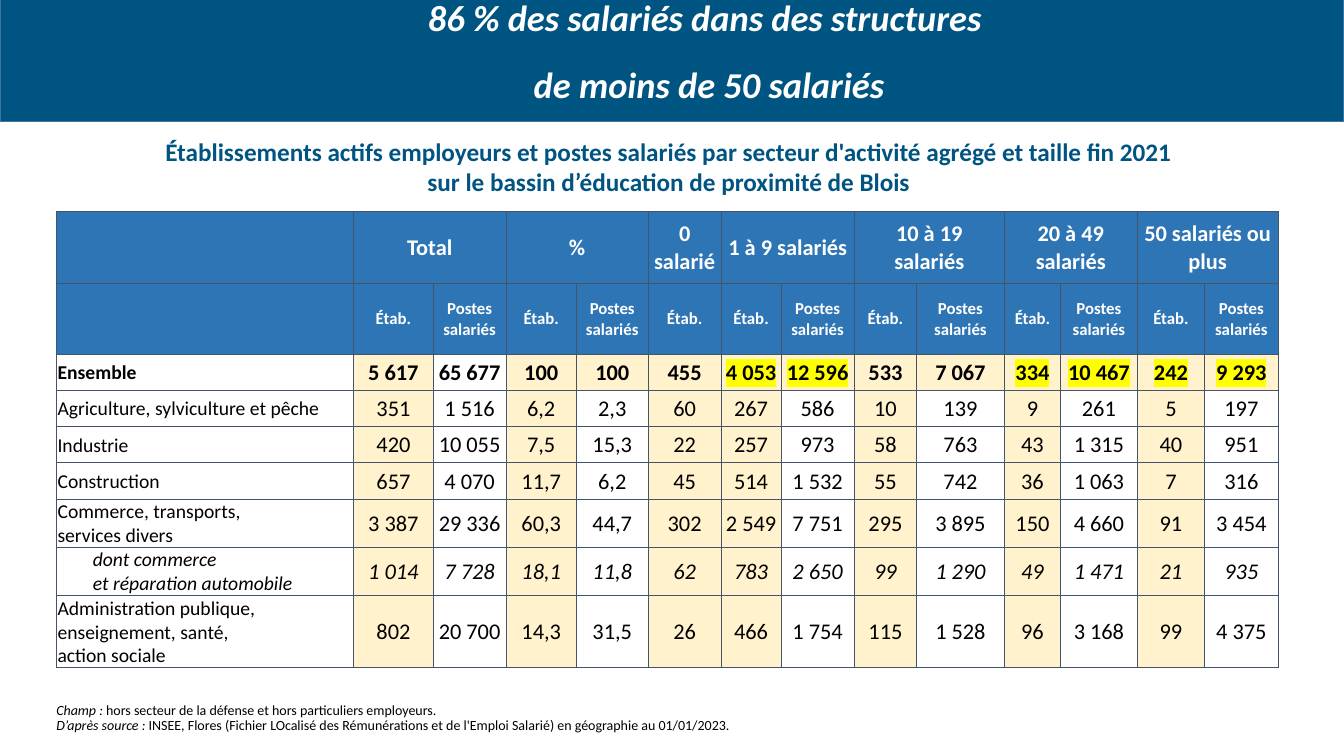
from lxml.etree import SubElement, fromstring
from pptx import Presentation
from pptx.dml.color import RGBColor
from pptx.enum.shapes import MSO_SHAPE
from pptx.enum.text import MSO_ANCHOR, MSO_AUTO_SIZE, PP_ALIGN
from pptx.oxml.ns import nsdecls, qn
from pptx.util import Cm, Pt

# Content
TITLE = ["86 % des salariés dans des structures ", "de moins de 50 salariés"]
SUBTITLE = [
    "Établissements actifs employeurs et postes salariés par secteur d'activité agrégé et taille fin 2021",
    "sur le bassin d’éducation de proximité de Blois",
]
NOTES = [
    ("Champ : ", "hors secteur de la défense et hors particuliers employeurs."),
    ("D’après source : ", "INSEE, Flores (Fichier LOcalisé des Rémunérations et de l'Emploi Salarié) "
                          "en géographie au 01/01/2023."),
]
MEASURES = ["Étab.", "Postes salariés"]
GROUPS = [  # heading lines, number of measures below
    (["Total"], 2), (["%"], 2), (["0 salarié"], 1), (["1 à 9 salariés"], 2),
    (["10 à 19", "salariés"], 2), (["20 à 49 salariés"], 2), (["50 salariés ou plus"], 2),
]
SECTORS = [
    (["Ensemble"], ["5 617", "65 677", "100", "100", "455", "4 053", "12 596",
                    "533", "7 067", "334", "10 467", "242", "9 293"]),
    (["Agriculture, sylviculture et pêche"],
     ["351", "1 516", "6,2", "2,3", "60", "267", "586", "10", "139", "9", "261", "5", "197"]),
    (["Industrie"],
     ["420", "10 055", "7,5", "15,3", "22", "257", "973", "58", "763", "43", "1 315", "40", "951"]),
    (["Construction"],
     ["657", "4 070", "11,7", "6,2", "45", "514", "1 532", "55", "742", "36", "1 063", "7", "316"]),
    (["Commerce, transports,", "services divers"],
     ["3 387", "29 336", "60,3", "44,7", "302", "2 549", "7 751",
      "295", "3 895", "150", "4 660", "91", "3 454"]),
    (["dont commerce", "et réparation automobile"],
     ["1 014", "7 728", "18,1", "11,8", "62", "783", "2 650",
      "99", "1 290", "49", "1 471", "21", "935"]),
    (["Administration publique, enseignement, santé,", "action sociale"],
     ["802", "20 700", "14,3", "31,5", "26", "466", "1 754",
      "115", "1 528", "96", "3 168", "99", "4 375"]),
]
HIGHLIGHTED = {"4 053", "12 596", "334", "10 467", "242", "9 293"}
COL_WIDTHS = [7.49, 2.01, 1.83, 1.78, 1.8, 1.85, 1.5, 1.85, 1.57, 2.21, 1.42, 1.93, 1.7, 1.85]
ROW_HEIGHTS = [1.8, 1.8] + [0.91] * 6 + [1.8]

FONT = "Calibri"
NAVY = RGBColor(0x00, 0x54, 0x82)
BANNER_EDGE = RGBColor(0x43, 0x73, 0x9E)
HEADER = RGBColor(0x2E, 0x75, 0xB6)
CREAM = RGBColor(0xFF, 0xF2, 0xCC)
GRID = RGBColor(0x44, 0x54, 0x6A)
YELLOW = RGBColor(0xFF, 0xFF, 0x00)
WHITE = RGBColor(0xFF, 0xFF, 0xFF)
BLACK = RGBColor(0x00, 0x00, 0x00)


def add_run(p, text, size, color, bold=False, italic=False, highlight=None):
    r = p.add_run()
    r.text = text
    r.font.size, r.font.bold, r.font.italic = Pt(size), bold, italic
    r.font.color.rgb = color
    if highlight:
        mark = SubElement(r.font._element, qn("a:highlight"))
        SubElement(mark, qn("a:srgbClr")).set("val", str(highlight))
    r.font.name = FONT


def add_lines(tf, lines, size, color, align=PP_ALIGN.CENTER, **style):
    for i, line in enumerate(lines):
        p = tf.add_paragraph() if i else tf.paragraphs[0]
        p.alignment = align
        add_run(p, line, size, color, **style)


def paint(cell, color):
    if color:
        cell.fill.solid()
        cell.fill.fore_color.rgb = color
    else:
        cell.fill.background()
    tc_pr = cell._tc.get_or_add_tcPr()
    for i, side in enumerate("LRTB"):
        tc_pr.insert(i, fromstring(
            f'<a:ln{side} {nsdecls("a")} w="{Pt(0.5)}"><a:solidFill>'
            f'<a:srgbClr val="{GRID}"/></a:solidFill></a:ln{side}>'))


def write(cell, lines, size, color, align=PP_ALIGN.CENTER, **style):
    cell.vertical_anchor = MSO_ANCHOR.MIDDLE
    cell.margin_left = cell.margin_right = cell.margin_top = Cm(0.03)
    cell.margin_bottom = 0
    add_lines(cell.text_frame, lines, size, color, align, **style)


prs = Presentation()
prs.slide_width, prs.slide_height = Cm(33.87), Cm(19.05)
s = prs.slides.add_slide(prs.slide_layouts[5])

# Subtitle
tf = s.shapes.add_textbox(Cm(3.89), Cm(3.3), Cm(25.93), Cm(1.8)).text_frame
tf.word_wrap = True
tf.margin_left = tf.margin_right = 0
add_lines(tf, SUBTITLE, 18, NAVY, bold=True)

# Notes
tf = s.shapes.add_textbox(Cm(1.17), Cm(17.6), Cm(25.68), Cm(1.07)).text_frame
tf.word_wrap = True
for i, (lead, note) in enumerate(NOTES):
    p = tf.add_paragraph() if i else tf.paragraphs[0]
    p.line_spacing = 0.9
    add_run(p, lead, 10, BLACK, italic=True)
    add_run(p, note, 10, BLACK)

# Table grid
table = s.shapes.add_table(len(ROW_HEIGHTS), len(COL_WIDTHS), Cm(1.42), Cm(5.33),
                           Cm(sum(COL_WIDTHS)), Cm(sum(ROW_HEIGHTS))).table
table.first_row = table.horz_banding = False
for column, width in zip(table.columns, COL_WIDTHS):
    column.width = Cm(width)
for row, height in zip(table.rows, ROW_HEIGHTS):
    row.height = Cm(height)

# Table headings
measure_of = [None]
for heading, count in GROUPS:
    col = len(measure_of)
    if count > 1:
        table.cell(0, col).merge(table.cell(0, col + count - 1))
    write(table.cell(0, col), heading, 16, WHITE, bold=True)
    measure_of += MEASURES[:count]
for col, measure in enumerate(measure_of):
    for row in (0, 1):
        paint(table.cell(row, col), HEADER)
    if measure:
        write(table.cell(1, col), [measure], 12, WHITE, bold=True)

# Table body
for row, (label, values) in enumerate(SECTORS, start=2):
    is_total = label[0] == "Ensemble"
    is_detail = label[0].startswith("dont")
    style = {"bold": is_total, "italic": is_detail}
    head = table.cell(row, 0)
    paint(head, None)
    write(head, label, 14, BLACK, PP_ALIGN.LEFT, **style)
    if is_detail:
        for p in head.text_frame.paragraphs:
            p._p.get_or_add_pPr().set("marL", str(Cm(0.89)))
    for col, value in enumerate(values, start=1):
        cell = table.cell(row, col)
        cream = measure_of[col] == MEASURES[0] or (is_total and col != 2)
        paint(cell, CREAM if cream else None)
        mark = YELLOW if is_total and value in HIGHLIGHTED else None
        write(cell, [value], 16, BLACK, highlight=mark, **style)

# Banner
banner = s.shapes.add_shape(MSO_SHAPE.RECTANGLE, 0, Cm(-0.08), prs.slide_width, Cm(3.15))
banner.shadow.inherit = False
banner.fill.solid()
banner.fill.fore_color.rgb = NAVY
banner.line.color.rgb = BANNER_EDGE
banner.line.width = Pt(1)

# Title, in front of the banner
title = s.shapes.title
banner.element.addnext(title.element)
title.left, title.top, title.width, title.height = Cm(1.9), Cm(-0.08), Cm(31.95), Cm(3.43)
tf = title.text_frame
tf.auto_size = MSO_AUTO_SIZE.NONE
tf.word_wrap = True
tf.vertical_anchor = MSO_ANCHOR.BOTTOM
tf.margin_bottom = Cm(0.68)
add_lines(tf, TITLE, 26, WHITE, bold=True, italic=True)
for p in tf.paragraphs:
    p.line_spacing = 0.9
tf.paragraphs[1].space_before = Pt(19.5)

prs.save("out.pptx")
